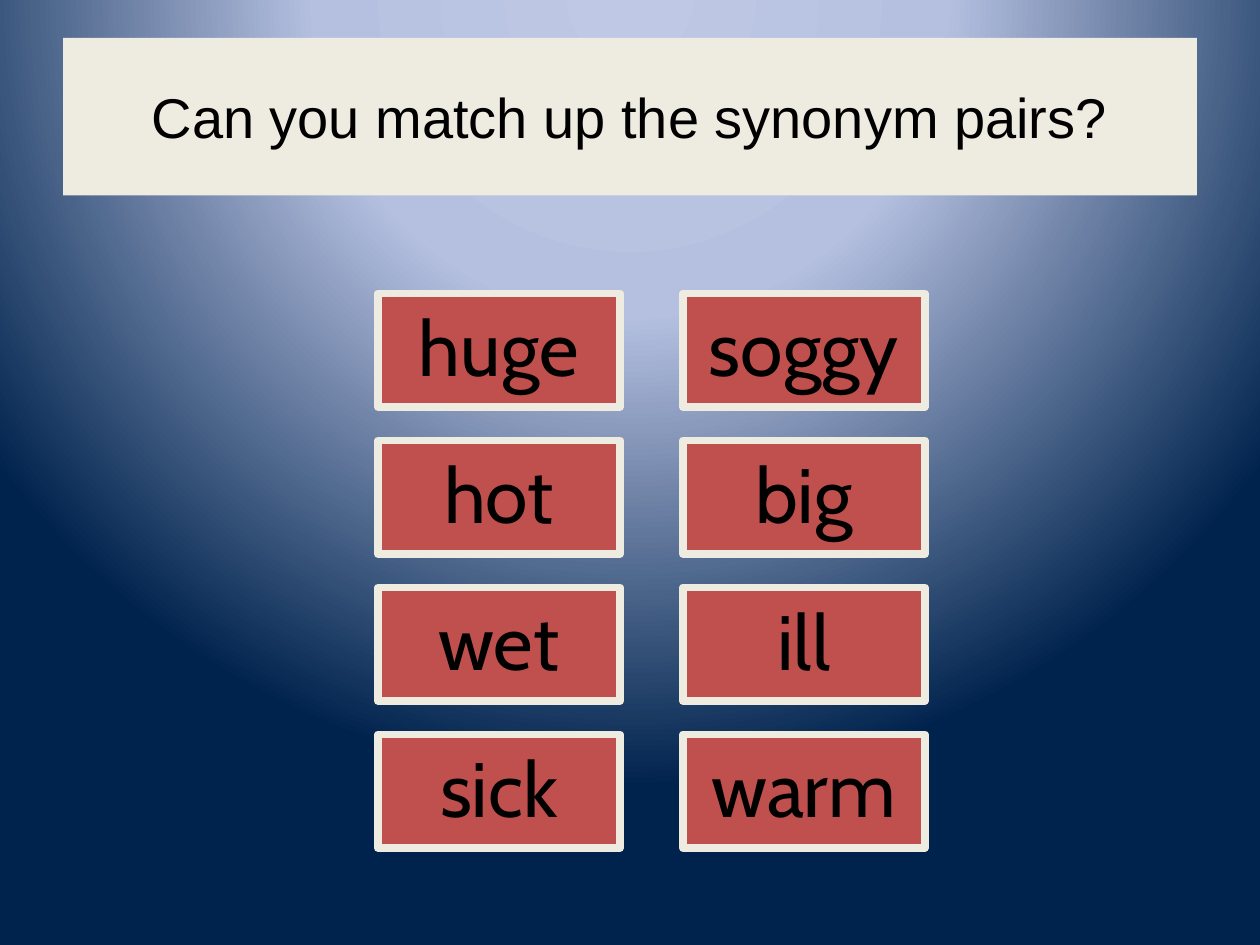
from lxml import etree
from pptx import Presentation
from pptx.dml.color import RGBColor
from pptx.enum.shapes import MSO_SHAPE
from pptx.enum.text import MSO_ANCHOR, MSO_AUTO_SIZE, PP_ALIGN
from pptx.oxml import parse_xml
from pptx.oxml.ns import nsdecls, qn
from pptx.util import Inches, Pt

RECT = MSO_SHAPE.RECTANGLE
CENTER = PP_ALIGN.CENTER
TOP, MIDDLE = MSO_ANCHOR.TOP, MSO_ANCHOR.MIDDLE
GROW, FIXED = MSO_AUTO_SIZE.SHAPE_TO_FIT_TEXT, MSO_AUTO_SIZE.NONE

CREAM, RED, BLACK = "EEECE1", "C0504D", "000000"
GLOW = [(0, "BFC9E5"), (40, "B5C0E0"), (100, "00234D")]
WORDS = [("huge", "soggy"), ("hot", "big"), ("wet", "ill"), ("sick", "warm")]
GRID_LEFT, GRID_TOP = 3, 2.33
COL_STEP, ROW_STEP = 2.42, 7 / 6
CARD_W, CARD_H = 1.92, 0.9


def rgb(value):
    """Turn a hex string into a colour."""
    return RGBColor.from_string(value)


def fill_shape(sp, color):
    """Give a shape a solid fill."""
    sp.fill.solid()
    sp.fill.fore_color.rgb = rgb(color)


def write_text(sp, text, font, size, anchor, auto_size):
    """Write one centred black paragraph and return it."""
    tf = sp.text_frame
    tf.text = text
    tf.word_wrap = True
    tf.vertical_anchor = anchor
    tf.auto_size = auto_size
    p = tf.paragraphs[0]
    p.alignment = CENTER
    p.font.name = font
    p.font.size = Pt(size)
    p.font.color.rgb = rgb(BLACK)
    return p


def paint_background(s):
    """Fill the background with a round glow from above the slide."""
    s.background.fill.gradient()
    old = next(s.element.iter(qn("a:gradFill")))
    stops = "".join(
        f'<a:gs pos="{pos * 1000}"><a:srgbClr val="{color}"/></a:gs>'
        for pos, color in GLOW
    )
    new = parse_xml(
        f'<a:gradFill {nsdecls("a")} rotWithShape="1"><a:gsLst>{stops}</a:gsLst>'
        '<a:path path="circle"><a:fillToRect l="50000" t="-80000" r="50000" '
        'b="180000"/></a:path></a:gradFill>'
    )
    old.getparent().replace(old, new)


def add_title(s, text):
    """Place the title on its cream band."""
    sp = s.shapes.title
    sp.left, sp.top = Inches(0.5), Inches(0.3)
    sp.width, sp.height = Inches(9), Inches(1.25)
    fill_shape(sp, CREAM)
    write_text(sp, text, "Arial", 32, MIDDLE, FIXED)


def add_card(s, col, row, word):
    """Add a word card at a grid position."""
    sp = s.shapes.add_shape(
        RECT,
        Inches(GRID_LEFT + col * COL_STEP),
        Inches(GRID_TOP + row * ROW_STEP),
        Inches(CARD_W),
        Inches(CARD_H),
    )
    sp.shadow.inherit = False
    fill_shape(sp, RED)
    sp.line.color.rgb = rgb(CREAM)
    sp.line.width = Pt(4.5)
    p = write_text(sp, word, "Cabin", 44, TOP, GROW)
    p.space_before = Pt(0)
    before = next(sp.element.iter(qn("a:spcBef")))
    before.clear()
    etree.SubElement(before, qn("a:spcPct"), val="50000")


def main():
    """Build the synonym matching slide."""
    prs = Presentation()
    prs.slide_width, prs.slide_height = Inches(10), Inches(7.5)
    s = prs.slides.add_slide(prs.slide_layouts[5])
    paint_background(s)
    add_title(s, "Can you match up the synonym pairs?")
    for row, pair in enumerate(WORDS):
        for col, word in enumerate(pair):
            add_card(s, col, row, word)
    prs.save("out.pptx")


if __name__ == "__main__":
    main()
